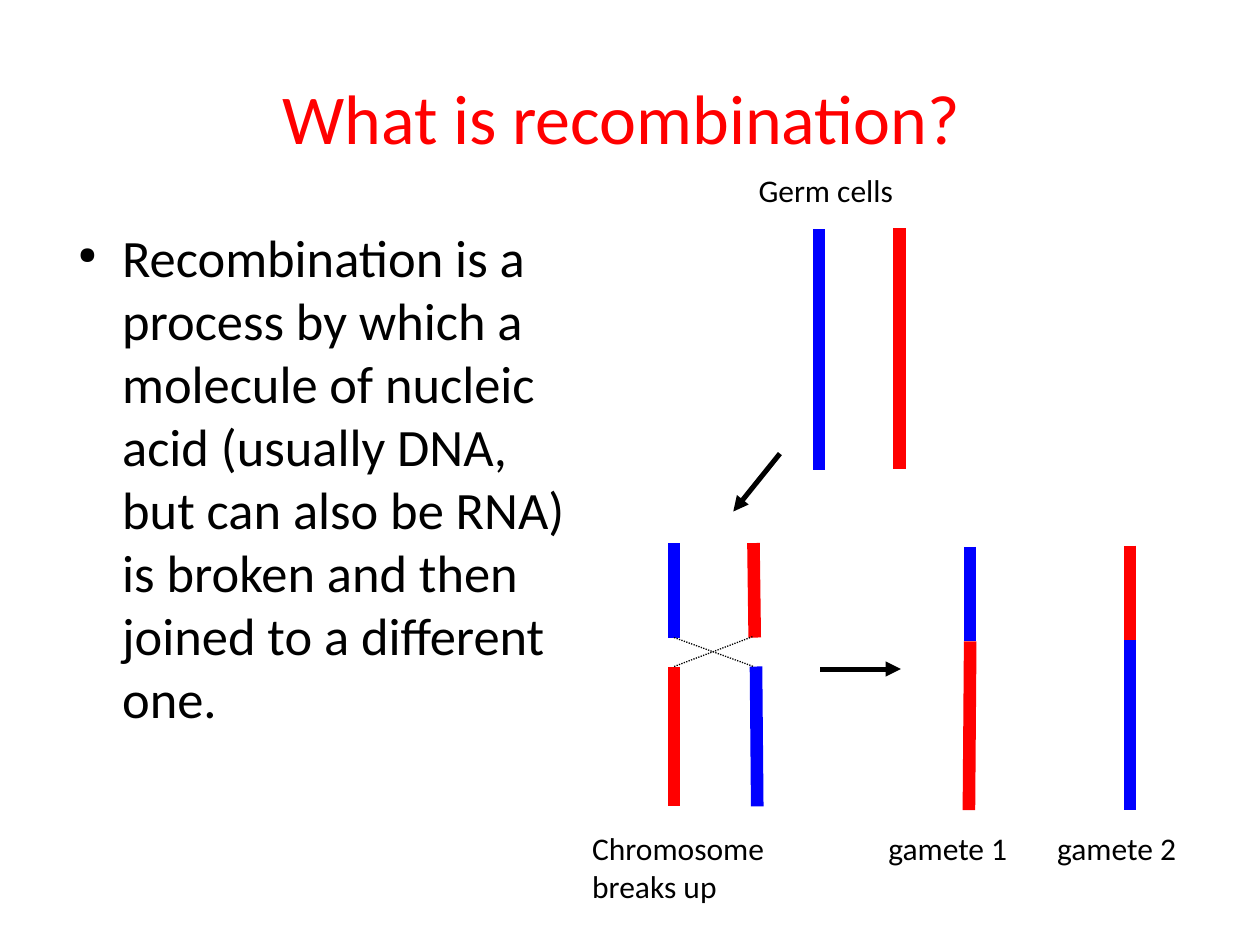
from lxml.etree import SubElement
from pptx import Presentation
from pptx.dml.color import RGBColor
from pptx.enum.dml import MSO_LINE
from pptx.enum.shapes import MSO_CONNECTOR
from pptx.enum.text import MSO_ANCHOR, PP_ALIGN
from pptx.oxml.ns import qn
from pptx.util import Inches, Pt

RED = RGBColor(0xFF, 0x00, 0x00)
BLUE = RGBColor(0x00, 0x00, 0xFF)
BLACK = RGBColor(0x00, 0x00, 0x00)


def add_text(slide, words, box, size, color=BLACK, inset=(0.09, 0.04, 0.09, 0.04)):
    frame = slide.shapes.add_textbox(*map(Inches, box)).text_frame
    frame.word_wrap = True
    frame.margin_left, frame.margin_top, frame.margin_right, frame.margin_bottom = map(Inches, inset)
    run = frame.paragraphs[0].add_run()
    run.text = words
    run.font.name = "Calibri"
    run.font.size = Pt(size)
    run.font.color.rgb = color
    return frame


def add_line(slide, ends, color, width, dash=None, arrow=False):
    line = slide.shapes.add_connector(MSO_CONNECTOR.STRAIGHT, *map(Inches, ends))
    line.line.color.rgb = color
    line.line.width = Pt(width)
    if dash:
        line.line.dash_style = dash
    props = line._element.spPr
    if arrow:
        SubElement(props.find(qn("a:ln")), qn("a:tailEnd"), type="triangle")
    SubElement(props, qn("a:effectLst"))


deck = Presentation()
deck.slide_width = Inches(10)
deck.slide_height = Inches(7.5)
slide = deck.slides.add_slide(deck.slide_layouts[6])

title = add_text(slide, "What is recombination?", (0.43, 0.28, 9, 1.25), 40, RED, (0, 0.04, 0, 0))
title.vertical_anchor = MSO_ANCHOR.MIDDLE
title.paragraphs[0].alignment = PP_ALIGN.CENTER

body = add_text(
    slide,
    "Recombination is a process by which a molecule of nucleic acid "
    "(usually DNA, but can also be RNA) is broken and then joined to a different one.",
    (0.5, 1.76, 4.03, 4.82), 30, inset=(0, 0.03, 0, 0))
para = body.paragraphs[0]
para.space_after = Pt(12.9)
props = para._p.get_or_add_pPr()
props.set("marL", str(Inches(0.47)))
props.set("indent", str(Inches(-0.35)))
SubElement(props, qn("a:buSzPct"), val="45000")
SubElement(props, qn("a:buChar"), char="●")

strands = [
    (6.5, 1.82, 6.5, 3.73, BLUE),
    (7.14, 1.81, 7.14, 3.72, RED),
    (5.35, 4.31, 5.35, 5.06, BLUE),
    (5.98, 4.31, 5.99, 5.06, RED),
    (6, 5.29, 6.01, 6.4, BLUE),
    (5.35, 5.29, 5.35, 6.4, RED),
    (7.7, 4.34, 7.7, 5.09, BLUE),
    (8.97, 4.33, 8.97, 5.08, RED),
    (8.97, 5.08, 8.97, 6.43, BLUE),
    (7.7, 5.09, 7.69, 6.43, RED),
]
for *ends, color in strands:
    add_line(slide, ends, color, 7.2)

for ends in [(6.19, 3.6, 5.82, 4.06), (6.51, 5.31, 7.15, 5.31)]:
    add_line(slide, ends, BLACK, 2.89, arrow=True)

for ends in [(5.35, 5.29, 5.98, 5.05), (5.35, 5.06, 5.98, 5.29)]:
    add_line(slide, ends, BLACK, 0.75, dash=MSO_LINE.ROUND_DOT)

labels = [
    ("gamete 1", (6.96, 6.54, 1.42, 0.34)),
    ("gamete 2", (8.3, 6.54, 1.38, 0.34)),
    ("Chromosome breaks up", (4.61, 6.54, 1.91, 0.59)),
    ("Germ cells", (5.93, 1.32, 1.62, 0.34)),
]
for words, box in labels:
    add_text(slide, words, box, 18)

deck.save("out.pptx")
